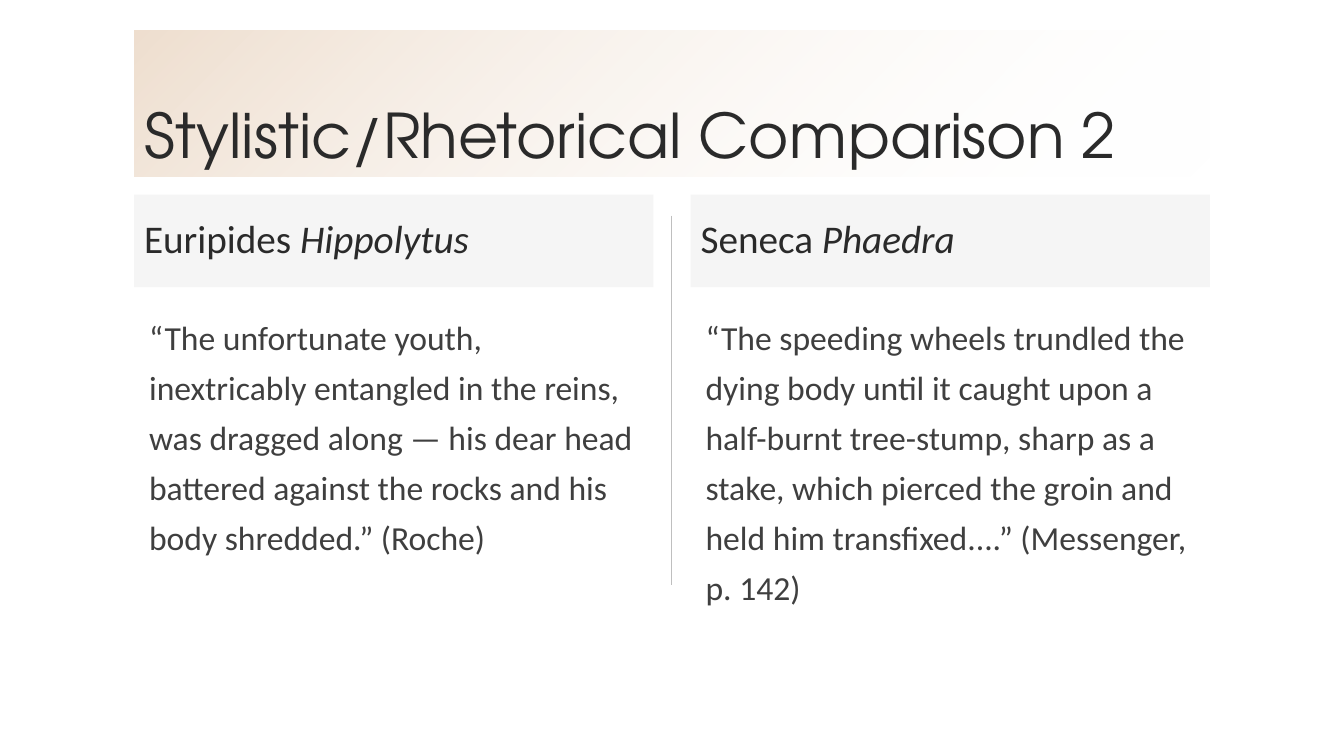
import pptx
import pptx.dml.color
import pptx.enum.shapes
import pptx.enum.text
import pptx.oxml
import pptx.oxml.ns
import pptx.util

PX = 9144
RGB = pptx.dml.color.RGBColor
ANCHOR = pptx.enum.text.MSO_ANCHOR
INK = RGB(0x2A, 0x2A, 0x2A)
BODY_INK = RGB(0x3F, 0x3F, 0x3F)
GREY = RGB(0xBF, 0xBF, 0xBF)
TAN = RGB(0xCE, 0x9F, 0x71)
WHITE = RGB(0xFF, 0xFF, 0xFF)
TITLE_FONT = "TeX Gyre Adventor"
BODY_FONT = "Calibri"

TITLE = "Stylistic/Rhetorical Comparison 2"
COLUMNS = [
    ("Euripides ", "Hippolytus",
     "“The unfortunate youth, inextricably entangled in the reins, was dragged along — "
     "his dear head battered against the rocks and his body shredded.” (Roche)"),
    ("Seneca ", "Phaedra",
     "“The speeding wheels trundled the dying body until it caught upon a half-burnt "
     "tree-stump, sharp as a stake, which pierced the groin and held him transfixed....” "
     "(Messenger, p. 142)"),
]


def emu(*lengths):
    """Turn px lengths into EMU."""
    return [pptx.util.Emu(length * PX) for length in lengths]


def set_opacity(shape, *percents):
    """Give each fill colour of a shape its opacity, in order."""
    colours = shape._element.spPr.iter(pptx.oxml.ns.qn("a:srgbClr"))
    for colour, percent in zip(list(colours), percents):
        alpha = pptx.oxml.parse_xml(
            f'<a:alpha {pptx.oxml.ns.nsdecls("a")} val="{percent * 1000}"/>')
        colour.append(alpha)


def write(shape, spans, font, size, colour, spacing, anchor):
    """Write one left-aligned paragraph of (text, italic) spans."""
    frame = shape.text_frame
    frame.word_wrap = True
    frame.auto_size = pptx.enum.text.MSO_AUTO_SIZE.NONE
    frame.vertical_anchor = anchor
    para = frame.paragraphs[0]
    para.alignment = pptx.enum.text.PP_ALIGN.LEFT
    para.line_spacing = spacing
    for text, italic in spans:
        span = para.add_run()
        span.text = text
        span.font.name = font
        span.font.size = pptx.util.Pt(size)
        span.font.italic = italic
        span.font.color.rgb = colour
    return para


def add_title(page, left, top, width, height):
    """Place the title on its fading band."""
    title = page.shapes.title
    title.left, title.top, title.width, title.height = emu(left, top, width, height)
    title.fill.gradient()
    title.fill.gradient_angle = 315
    for stop, colour, position in zip(title.fill.gradient_stops, (TAN, WHITE), (0, 1)):
        stop.color.rgb = colour
        stop.position = position
    set_opacity(title, 34, 0)
    write(title, [(TITLE, False)], TITLE_FONT, 44, INK, 0.9, ANCHOR.BOTTOM)


def add_column(page, left, top, width, height, author, work, quote):
    """Place a shaded heading with a quotation below it."""
    heading_height, quote_offset = 92, 107
    heading = page.shapes.add_shape(
        pptx.enum.shapes.MSO_SHAPE.RECTANGLE, *emu(left, top, width, heading_height))
    heading.shadow.inherit = False
    heading.fill.solid()
    heading.fill.fore_color.rgb = GREY
    heading.line.fill.background()
    set_opacity(heading, 15)
    write(heading, [(author, False), (work, True)], BODY_FONT, 28, INK, 0.9, ANCHOR.MIDDLE)
    box = page.shapes.add_textbox(
        *emu(left, top + quote_offset, width, height - quote_offset))
    para = write(box, [(quote, False)], BODY_FONT, 24, BODY_INK, 1.24, ANCHOR.TOP)
    properties = para._p.get_or_add_pPr()
    properties.set("marL", str(5 * PX))
    properties.set("indent", "0")


def add_divider(page, x, top, bottom):
    """Draw the thin rule between the columns."""
    line = page.shapes.add_connector(
        pptx.enum.shapes.MSO_CONNECTOR.STRAIGHT, *emu(x, top, x, bottom))
    line.line.color.rgb = GREY
    line.line.width = pptx.util.Pt(1)
    line._element.spPr.append(
        pptx.oxml.parse_xml(f'<a:effectLst {pptx.oxml.ns.nsdecls("a")}/>'))


def add_comparison(page, left, top, width, height):
    """Place the columns side by side with a rule in the gap."""
    gap = 37
    column_width = (width - gap) // len(COLUMNS)
    add_divider(page, left + width // 2, top + 21, top + 387)
    for index, column in enumerate(COLUMNS):
        add_column(page, left + index * (column_width + gap), top,
                   column_width, height, *column)


def main():
    """Build and save the slide."""
    deck = pptx.Presentation()
    deck.slide_width, deck.slide_height = emu(1333, 750)
    page = deck.slides.add_slide(deck.slide_layouts[5])
    add_title(page, 133, 30, 1067, 145)
    add_comparison(page, 133, 193, 1067, 482)
    deck.save("out.pptx")


if __name__ == "__main__":
    main()
